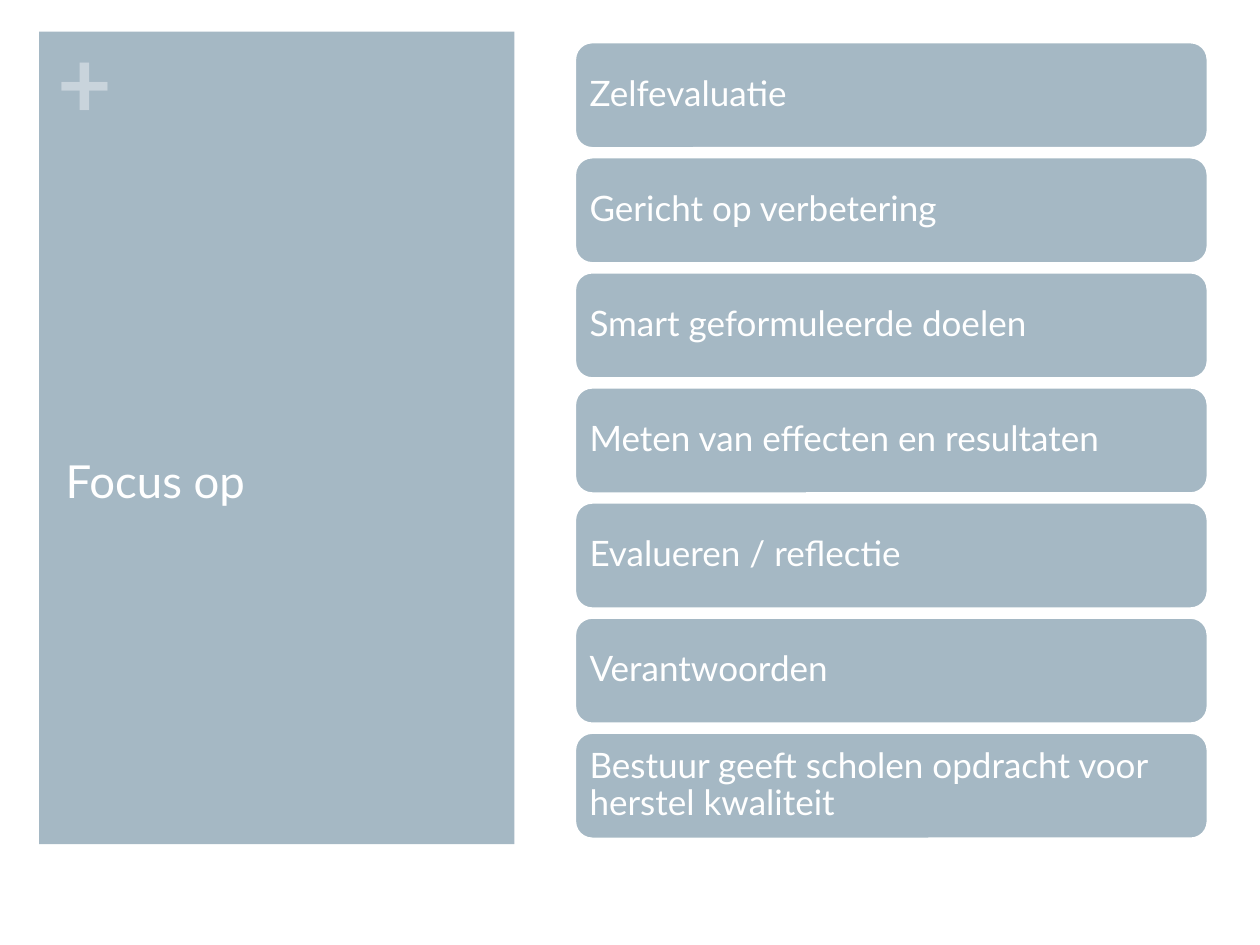
"""Builds the "Focus op" slide: a titled panel beside a stack of focus points."""
from dataclasses import dataclass

from pptx import Presentation
from pptx import util as u
from pptx.dml.color import RGBColor
from pptx.enum import shapes, text

COLORS = {"panel": "A5B8C4", "plus": "C9D4DC", "white": "FFFFFF"}
FONT = "Lato"
FOCUS_POINTS = [
    "Zelfevaluatie",
    "Gericht op verbetering",
    "Smart geformuleerde doelen",
    "Meten van effecten en resultaten",
    "Evalueren / reflectie",
    "Verantwoorden",
    "Bestuur geeft scholen opdracht voor herstel kwaliteit",
]
FIRST_TOP, PITCH = 0.84, 2.32


@dataclass
class Box:
    left: float
    top: float
    width: float
    height: float

    def lengths(self) -> list:
        return [u.Cm(n) for n in (self.left, self.top, self.width, self.height)]


def write(shape, words: str, size: int, color: str, anchor, inset=None, bold=False):
    frame = shape.text_frame
    frame.word_wrap = True
    frame.auto_size = text.MSO_AUTO_SIZE.NONE
    frame.vertical_anchor = anchor
    if inset is not None:
        frame.margin_left = frame.margin_right = u.Cm(inset)
        frame.margin_top = frame.margin_bottom = u.Cm(inset)
    frame.text = words
    paragraph = frame.paragraphs[0]
    paragraph.alignment = text.PP_ALIGN.LEFT
    paragraph.font.name = FONT
    paragraph.font.size = u.Pt(size)
    paragraph.font.bold = bold
    paragraph.font.color.rgb = RGBColor.from_string(COLORS[color])
    return paragraph


def add_block(slide, kind, box: Box):
    shape = slide.shapes.add_shape(kind, *box.lengths())
    shape.shadow.inherit = False
    shape.fill.solid()
    shape.fill.fore_color.rgb = RGBColor.from_string(COLORS["panel"])
    shape.line.fill.background()
    return shape


def add_focus_point(slide, words: str, box: Box) -> None:
    shape = add_block(slide, shapes.MSO_SHAPE.ROUNDED_RECTANGLE, box)
    shape.line.color.rgb = RGBColor.from_string(COLORS["white"])
    shape.line.width = u.Pt(2)
    paragraph = write(shape, words, 20, "white", text.MSO_ANCHOR.MIDDLE, inset=0.2)
    paragraph.line_spacing = 0.9


def add_title_panel(slide) -> None:
    add_block(slide, shapes.MSO_SHAPE.RECTANGLE, Box(0.79, 0.64, 9.58, 16.38))
    plus = slide.shapes.add_textbox(*Box(1.17, 0.48, 1.14, 2.31).lengths())
    write(plus, "+", 54, "plus", text.MSO_ANCHOR.TOP, inset=0, bold=True)
    title = slide.shapes.title
    title.left, title.top, title.width, title.height = Box(1.07, 7.14, 9.04, 3.23).lengths()
    write(title, "Focus op", 26, "white", text.MSO_ANCHOR.BOTTOM)
    plus._element.addnext(title._element)


def main() -> None:
    presentation = Presentation()
    presentation.slide_width = u.Cm(25.4)
    presentation.slide_height = u.Cm(19.05)
    slide = presentation.slides.add_slide(presentation.slide_layouts[5])
    add_title_panel(slide)
    for row, words in enumerate(FOCUS_POINTS):
        add_focus_point(slide, words, Box(11.58, FIRST_TOP + row * PITCH, 12.78, 2.16))
    presentation.save("out.pptx")


if __name__ == "__main__":
    main()
